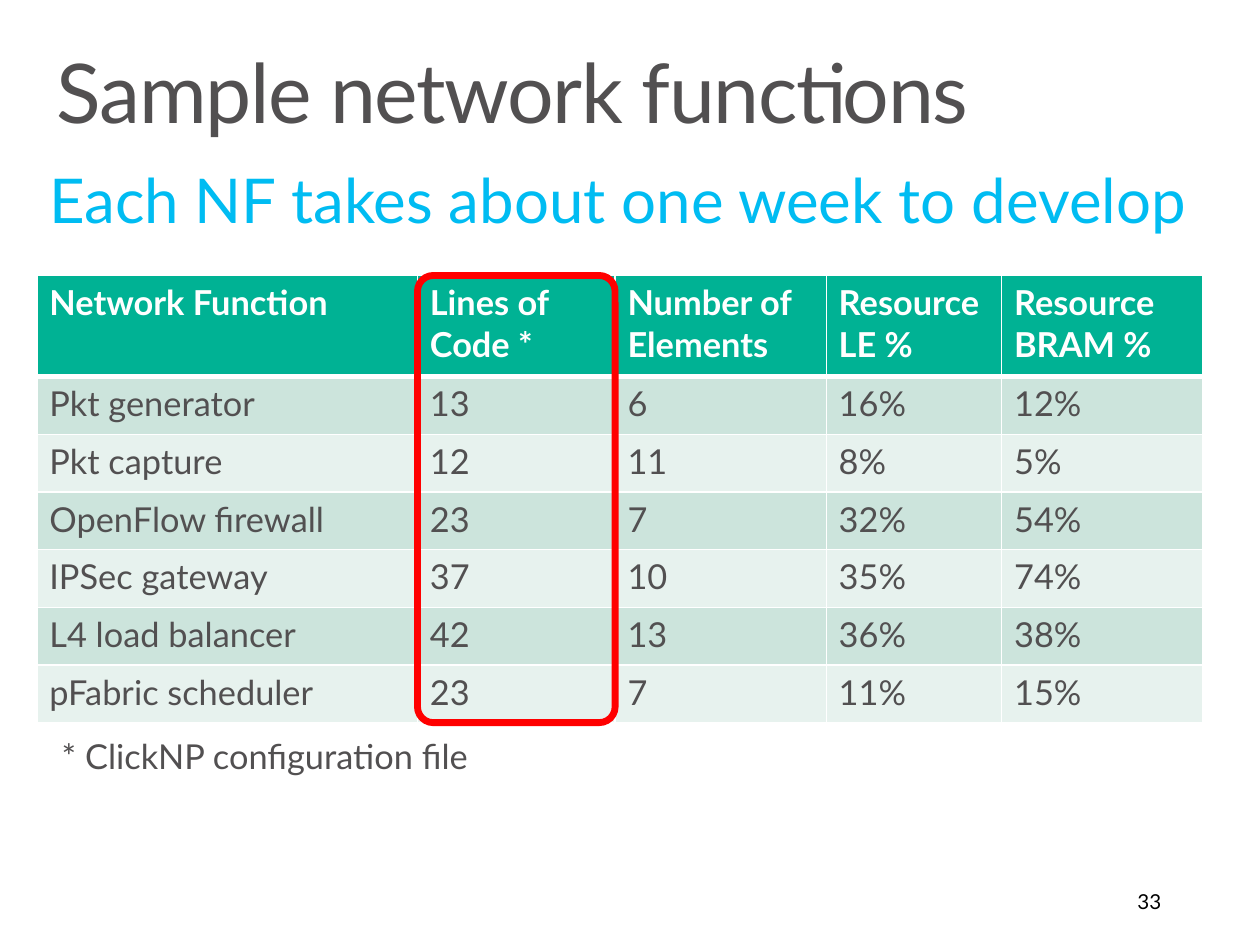
from lxml.etree import SubElement
from pptx import Presentation
from pptx.dml.color import RGBColor
from pptx.enum.shapes import MSO_SHAPE
from pptx.enum.text import MSO_ANCHOR, MSO_AUTO_SIZE, PP_ALIGN
from pptx.oxml.ns import qn
from pptx.util import Inches, Pt

COLORS = {
    "text": "525051",
    "accent": "00BCF2",
    "header": "00B294",
    "odd_row": "CCE4DC",
    "even_row": "E7F2EE",
    "white": "FFFFFF",
    "black": "000000",
    "highlight": "FF0000",
}
FONT = "Lato"
TABLE_BOX = (0.3, 2.23, 9.44, 3.62)
COLUMN_WIDTHS = [3.08, 1.6, 1.71, 1.42, 1.63]
HEADER_HEIGHT = 0.82
ROWS = [
    ("Network Function", "Lines of Code *", "Number of Elements", "Resource\nLE %", "Resource\nBRAM %"),
    ("Pkt generator", "13", "6", "16%", "12%"),
    ("Pkt capture", "12", "11", "8%", "5%"),
    ("OpenFlow firewall", "23", "7", "32%", "54%"),
    ("IPSec gateway", "37", "10", "35%", "74%"),
    ("L4 load balancer", "42", "13", "36%", "38%"),
    ("pFabric scheduler", "23", "7", "11%", "15%"),
]


def color(name):
    """Return the named palette colour."""
    return RGBColor.from_string(COLORS[name])


def format_text(frame, size, color_name, bold=False):
    """Format every run of a text frame."""
    for para in frame.paragraphs:
        for span in para.runs:
            span.font.name = FONT
            span.font.size = Pt(size)
            span.font.bold = bold
            span.font.color.rgb = color(color_name)


def set_margins(frame, side, end):
    """Set the side margins and the top and bottom margins in inches."""
    frame.margin_left = frame.margin_right = Inches(side)
    frame.margin_top = frame.margin_bottom = Inches(end)


def add_title(slide, box, text):
    """Place the slide title in its placeholder."""
    title = slide.shapes.title
    title.left, title.top, title.width, title.height = map(Inches, box)
    frame = title.text_frame
    frame.text = text
    frame.auto_size = MSO_AUTO_SIZE.NONE
    frame.vertical_anchor = MSO_ANCHOR.TOP
    set_margins(frame, 0.16, 0.1)
    para = frame.paragraphs[0]
    para.alignment = PP_ALIGN.LEFT
    para.line_spacing = 0.9
    format_text(frame, 48, "text")
    para.runs[0].font._element.set("spc", "-80")


def add_label(slide, box, text, size, color_name, line_spacing=0.9, wrap=True):
    """Add a one-paragraph text box and return its text frame."""
    frame = slide.shapes.add_textbox(*map(Inches, box)).text_frame
    frame.word_wrap = wrap
    frame.text = text
    frame.paragraphs[0].line_spacing = line_spacing
    format_text(frame, size, color_name)
    return frame


def add_footnote(slide, box, text):
    """Add the note below the table."""
    frame = add_label(slide, box, text, 20, "text", wrap=False)
    frame.auto_size = MSO_AUTO_SIZE.SHAPE_TO_FIT_TEXT
    set_margins(frame, 0.2, 0.16)
    frame.paragraphs[0].space_after = Pt(6)


def add_page_number(slide, box, text):
    """Add the page number at the lower right."""
    frame = add_label(slide, box, text, 12, "black", line_spacing=1.0)
    frame.vertical_anchor = MSO_ANCHOR.MIDDLE
    frame.paragraphs[0].alignment = PP_ALIGN.RIGHT


def set_borders(cell, top, bottom):
    """Draw white cell borders with the given top and bottom widths in points."""
    properties = cell._tc.get_or_add_tcPr()
    for side, width in (("L", 1), ("R", 1), ("T", top), ("B", bottom)):
        line = SubElement(properties, qn(f"a:ln{side}"), w=str(Pt(width)))
        fill = SubElement(line, qn("a:solidFill"))
        SubElement(fill, qn("a:srgbClr"), val=COLORS["white"])


def add_function_table(slide, box):
    """Add the table of network functions."""
    table = slide.shapes.add_table(len(ROWS), len(COLUMN_WIDTHS), *map(Inches, box)).table
    for column, width in zip(table.columns, COLUMN_WIDTHS):
        column.width = Inches(width)
    row_height = (box[3] - HEADER_HEIGHT) / (len(ROWS) - 1)
    for row_index, values in enumerate(ROWS):
        is_header = row_index == 0
        table.rows[row_index].height = Inches(HEADER_HEIGHT if is_header else row_height)
        band = "header" if is_header else "odd_row" if row_index % 2 else "even_row"
        for column_index, value in enumerate(values):
            cell = table.cell(row_index, column_index)
            cell.text_frame.text = value
            format_text(cell.text_frame, 20, "white" if is_header else "text", is_header)
            set_borders(cell, 3 if row_index == 1 else 1, 3 if is_header else 1)
            cell.fill.solid()
            cell.fill.fore_color.rgb = color(band)


def add_column_highlight(slide, box, column_index):
    """Outline one table column with a rounded rectangle."""
    left, top, _, height = box
    column_left = left + sum(COLUMN_WIDTHS[:column_index])
    outline = slide.shapes.add_shape(
        MSO_SHAPE.ROUNDED_RECTANGLE,
        *map(Inches, (column_left, top, COLUMN_WIDTHS[column_index], height)),
    )
    outline.adjustments[0] = 0.08
    outline.shadow.inherit = False
    outline.fill.background()
    outline.line.color.rgb = color("highlight")
    outline.line.width = Pt(4)


def build_deck():
    """Build and save the one-slide deck."""
    deck = Presentation()
    deck.slide_width, deck.slide_height = Inches(10.2), Inches(7.65)
    slide = deck.slides.add_slide(deck.slide_layouts.get_by_name("Title Only"))
    add_title(slide, (0.3, 0.32, 9.6, 1), "Sample network functions")
    add_label(slide, (0.3, 1.33, 9.6, 0.8), "Each NF takes about one week to develop", 36, "accent")
    add_function_table(slide, TABLE_BOX)
    add_footnote(slide, (0.3, 5.84, 3.73, 0.63), "* ClickNP configuration file")
    add_page_number(slide, (7.2, 7.09, 2.3, 0.41), "33")
    add_column_highlight(slide, TABLE_BOX, 1)
    deck.save("out.pptx")


if __name__ == "__main__":
    build_deck()
